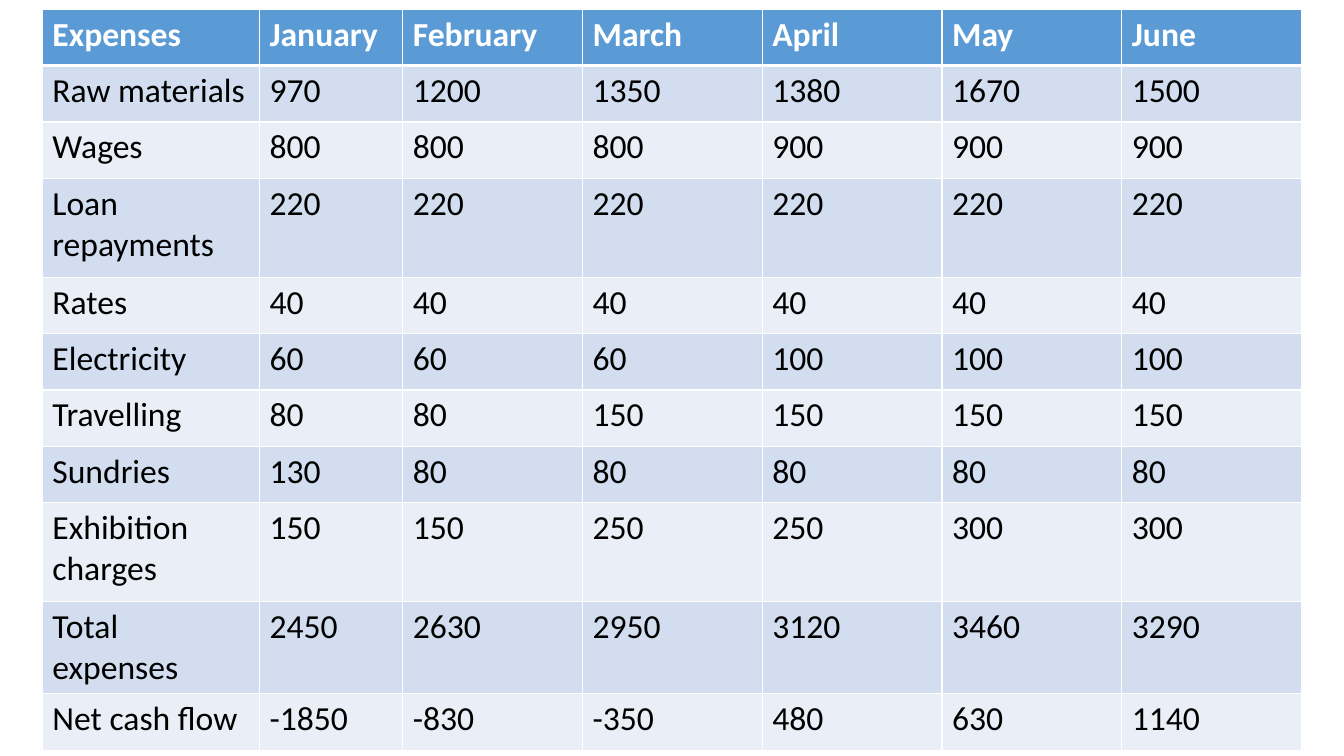
from lxml import etree
from pptx import Presentation
from pptx.dml.color import RGBColor
from pptx.oxml.ns import qn
from pptx.util import Inches, Pt

WHITE = RGBColor(0xFF, 0xFF, 0xFF)
BLACK = RGBColor(0x00, 0x00, 0x00)
HEADER_BLUE = RGBColor(0x5B, 0x9B, 0xD5)
BAND_DARK = RGBColor(0xD2, 0xDE, 0xEF)
BAND_LIGHT = RGBColor(0xEA, 0xEF, 0xF7)

HEADER_FONT = {"name": "Calibri", "size": Pt(24), "bold": True}
BODY_FONT = {"name": "Calibri", "size": Pt(24), "bold": False}

EXPENSES = [
    ("Expenses", "January", "February", "March", "April", "May", "June"),
    ("Raw materials", 970, 1200, 1350, 1380, 1670, 1500),
    ("Wages", 800, 800, 800, 900, 900, 900),
    ("Loan repayments", 220, 220, 220, 220, 220, 220),
    ("Rates", 40, 40, 40, 40, 40, 40),
    ("Electricity", 60, 60, 60, 100, 100, 100),
    ("Travelling", 80, 80, 150, 150, 150, 150),
    ("Sundries", 130, 80, 80, 80, 80, 80),
    ("Exhibition charges", 150, 150, 250, 250, 300, 300),
    ("Total expenses", 2450, 2630, 2950, 3120, 3460, 3290),
    ("Net cash flow", -1850, -830, -350, 480, 630, 1140),
]
COL_WIDTHS = [2.15, 1.42] + [1.78] * 5
ROW_HEIGHT, TALL_ROW_HEIGHT = 0.56, 0.98
TALL_ROWS = {"Loan repayments", "Exhibition charges"}


def set_borders(cell, widths):
    """Draw white cell borders; widths maps a side (L, R, T, B) to points."""
    tc_pr = cell._tc.get_or_add_tcPr()
    for side, width in widths.items():
        ln = etree.SubElement(tc_pr, qn(f"a:ln{side}"), w=str(Pt(width)))
        fill = etree.SubElement(ln, qn("a:solidFill"))
        etree.SubElement(fill, qn("a:srgbClr"), val=str(WHITE))


def format_cell(cell, value, row):
    header = row == 0
    # Borders, with a thick rule under the header
    set_borders(cell, {"L": 1, "R": 1, "T": 3 if row == 1 else 1,
                       "B": 3 if header else 1})
    # Header fill or alternating bands
    band = BAND_DARK if row % 2 else BAND_LIGHT
    cell.fill.solid()
    cell.fill.fore_color.rgb = HEADER_BLUE if header else band
    # Text
    r = cell.text_frame.paragraphs[0].add_run()
    r.text = str(value)
    for name, setting in (HEADER_FONT if header else BODY_FONT).items():
        setattr(r.font, name, setting)
    r.font.color.rgb = WHITE if header else BLACK


def add_expenses_table(slide, left, top, width, height):
    table = slide.shapes.add_table(
        len(EXPENSES), len(COL_WIDTHS), Inches(left), Inches(top),
        Inches(width), Inches(height)).table
    # Columns share the box width in proportion
    scale = width / sum(COL_WIDTHS)
    for column, col_width in zip(table.columns, COL_WIDTHS):
        column.width = Inches(col_width * scale)
    # Rows with wrapped labels are taller
    for i, values in enumerate(EXPENSES):
        tall = values[0] in TALL_ROWS
        table.rows[i].height = Inches(TALL_ROW_HEIGHT if tall else ROW_HEIGHT)
        for j, value in enumerate(values):
            format_cell(table.cell(i, j), value, i)


def main():
    prs = Presentation()
    prs.slide_width, prs.slide_height = Inches(13.33), Inches(7.5)
    slide = prs.slides.add_slide(prs.slide_layouts[6])
    add_expenses_table(slide, 0.42, 0.09, 12.49, 7.0)
    prs.save("out.pptx")


if __name__ == "__main__":
    main()
